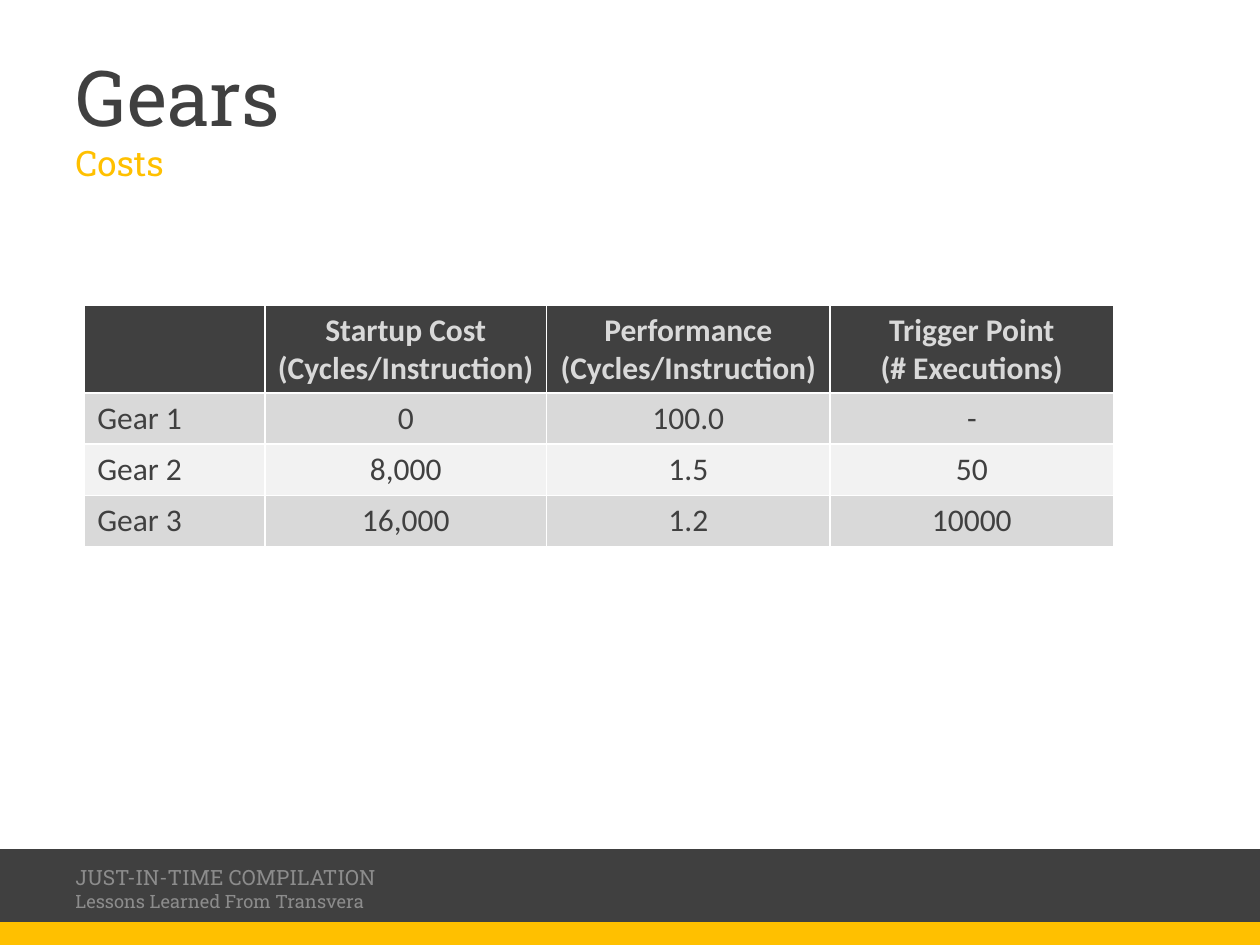
from pptx import Presentation
from pptx.dml.color import RGBColor
from pptx.enum.shapes import MSO_SHAPE
from pptx.enum.text import MSO_ANCHOR as ANCHOR, PP_ALIGN as ALIGN
from pptx.util import Pt

DARK = RGBColor(0x40, 0x40, 0x40)
AMBER = RGBColor(0xFF, 0xC0, 0x00)
GREY = RGBColor(0x8C, 0x8C, 0x8C)
SILVER = RGBColor(0xD9, 0xD9, 0xD9)
PALE = RGBColor(0xF2, 0xF2, 0xF2)

SLAB, BODY = "Roboto Slab", "Calibri"
COLUMN_WIDTHS = (103, 161, 162, 162)
ROW_HEIGHTS = (50.4, 29.2, 29.2, 29.2)
ROWS = (
    ("", "Startup Cost (Cycles/Instruction)",
     "Performance\n(Cycles/Instruction)", "Trigger Point\v(# Executions)"),
    ("Gear 1", "0", "100.0", "-"),
    ("Gear 2", "8,000", "1.5", "50"),
    ("Gear 3", "16,000", "1.2", "10000"),
)


def style_run(r, font, size, color, bold=False):
    """Set the font, size, colour and weight of a run."""
    r.font.name = font
    r.font.size = Pt(size)
    r.font.color.rgb = color
    r.font.bold = bold


def add_bar(s, top, height, color):
    """Add a full-width bar."""
    sp = s.shapes.add_shape(MSO_SHAPE.RECTANGLE, 0, Pt(top), Pt(720), Pt(height))
    sp.shadow.inherit = False
    sp.fill.solid()
    sp.fill.fore_color.rgb = color
    sp.line.color.rgb = color
    sp.line.width = Pt(2)


def add_text_pair(s, box, lines):
    """Add a two-line text box; each line is (text, size, colour)."""
    sp = s.shapes.add_textbox(*map(Pt, box))
    tf = sp.text_frame
    tf.word_wrap = True
    tf.vertical_anchor = ANCHOR.MIDDLE
    p = tf.paragraphs[0]
    p.text = "\v".join(text for text, _, _ in lines)
    for r, (_, size, color) in zip(p.runs, lines):
        style_run(r, SLAB, size, color)


def fill_cell(cell, text, row, col):
    """Write and format one table cell."""
    header = row == 0
    cell.fill.solid()
    cell.fill.fore_color.rgb = DARK if header else SILVER if row % 2 else PALE
    cell.text_frame.text = text
    for p in cell.text_frame.paragraphs:
        if col:
            p.alignment = ALIGN.CENTER
        for r in p.runs:
            style_run(r, BODY, 18, SILVER if header else DARK, header)


def add_cost_table(s):
    """Add the table of gear costs."""
    frame = s.shapes.add_table(len(ROWS), len(COLUMN_WIDTHS), Pt(48.4), Pt(174.2),
                               Pt(sum(COLUMN_WIDTHS)), Pt(sum(ROW_HEIGHTS)))
    table = frame.table
    for column, width in zip(table.columns, COLUMN_WIDTHS):
        column.width = Pt(width)
    for i, (height, texts) in enumerate(zip(ROW_HEIGHTS, ROWS)):
        table.rows[i].height = Pt(height)
        for j, text in enumerate(texts):
            fill_cell(table.cell(i, j), text, i, j)


def main():
    """Build the slide and save it."""
    prs = Presentation()
    prs.slide_width, prs.slide_height = Pt(720), Pt(540)
    s = prs.slides.add_slide(prs.slide_layouts[6])
    add_bar(s, 486, 54, DARK)
    add_bar(s, 527.8, 12.2, AMBER)
    add_text_pair(s, (36, 21.6, 648, 90),
                  (("Gears", 44, DARK), ("Costs", 20, AMBER)))
    add_cost_table(s)
    add_text_pair(s, (36, 493.2, 438, 28.8),
                  (("JUST-IN-TIME COMPILATION", 12, GREY),
                   ("Lessons Learned From Transvera", 10.5, GREY)))
    prs.save("out.pptx")


if __name__ == "__main__":
    main()
